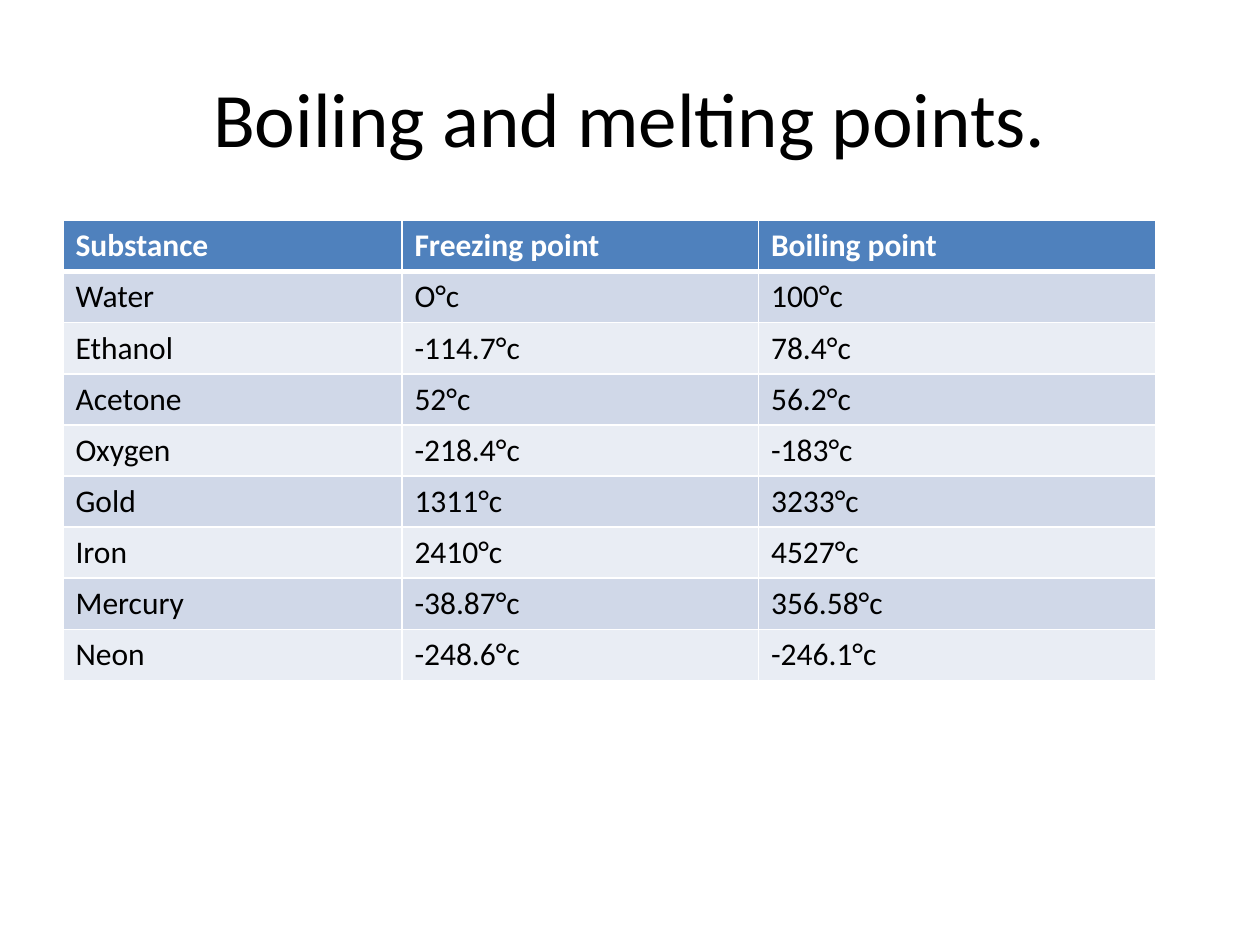
from dataclasses import dataclass

from lxml import etree
from pptx import Presentation
from pptx import util as u
from pptx.dml.color import RGBColor
from pptx.enum import text
from pptx.oxml.ns import qn


@dataclass(frozen=True)
class Theme:
    font: str = "Calibri"
    title_size: int = 44
    table_size: int = 18
    ink: str = "000000"
    paper: str = "FFFFFF"
    header: str = "4F81BD"
    bands: tuple = ("D0D8E8", "E9EDF4")
    thin: int = 1
    thick: int = 3


THEME = Theme()
TITLE = "Boiling and melting points."
COLUMN_WIDTHS = (2.69, 2.83, 3.15)
SUBSTANCES = (
    ("Substance", "Freezing point", "Boiling point"),
    ("Water", "O°c", "100°c"),
    ("Ethanol", "-114.7°c", "78.4°c"),
    ("Acetone", "52°c", "56.2°c"),
    ("Oxygen", "-218.4°c", "-183°c"),
    ("Gold", "1311°c", "3233°c"),
    ("Iron", "2410°c", "4527°c"),
    ("Mercury", "-38.87°c", "356.58°c"),
    ("Neon", "-248.6°c", "-246.1°c"),
)


def write(paragraph, words, size, color, bold=False):
    run = paragraph.add_run()
    run.text = words
    formats = {"name": THEME.font, "size": u.Pt(size), "bold": bold}
    for name, value in formats.items():
        setattr(run.font, name, value)
    run.font.color.rgb = RGBColor.from_string(color)


def set_borders(cell, widths):
    """Draw the cell's edges; widths maps L, R, T and B, in that order, to points."""
    properties = cell._tc.get_or_add_tcPr()
    for side, width in widths.items():
        line = etree.SubElement(properties, qn(f"a:ln{side}"), w=str(u.Pt(width)))
        fill = etree.SubElement(line, qn("a:solidFill"))
        etree.SubElement(fill, qn("a:srgbClr"), val=THEME.paper)


def add_title(slide, left, top, width, height):
    frame = slide.shapes.add_textbox(left, top, width, height).text_frame
    formats = {"word_wrap": True, "vertical_anchor": text.MSO_ANCHOR.MIDDLE}
    for name, value in formats.items():
        setattr(frame, name, value)
    paragraph = frame.paragraphs[0]
    paragraph.alignment = text.PP_ALIGN.CENTER
    write(paragraph, TITLE, THEME.title_size, THEME.ink)


def add_substance_table(slide, left, top, width, height):
    table = slide.shapes.add_table(
        len(SUBSTANCES), len(COLUMN_WIDTHS), left, top, width, height
    ).table
    for column, share in zip(table.columns, COLUMN_WIDTHS):
        column.width = int(width * share / sum(COLUMN_WIDTHS))

    for row, values in enumerate(SUBSTANCES):
        is_header = row == 0
        background = THEME.header if is_header else THEME.bands[(row - 1) % 2]
        color = THEME.paper if is_header else THEME.ink
        # The rule between header and body is thick on both sides
        borders = {
            "L": THEME.thin,
            "R": THEME.thin,
            "T": THEME.thick if row == 1 else THEME.thin,
            "B": THEME.thick if is_header else THEME.thin,
        }
        for column, value in enumerate(values):
            cell = table.cell(row, column)
            set_borders(cell, borders)
            cell.fill.solid()
            cell.fill.fore_color.rgb = RGBColor.from_string(background)
            write(cell.text_frame.paragraphs[0], value, THEME.table_size, color, is_header)


def main():
    presentation = Presentation()
    presentation.slide_width = u.Inches(10)
    presentation.slide_height = u.Inches(7.5)
    slide = presentation.slides.add_slide(presentation.slide_layouts[6])

    # Title across the top, table below it
    add_title(slide, u.Inches(0.5), u.Inches(0.3), u.Inches(9), u.Inches(1.25))
    add_substance_table(
        slide, u.Inches(0.5), u.Inches(1.75), u.Inches(sum(COLUMN_WIDTHS)), u.Inches(3.65)
    )
    presentation.save("out.pptx")


if __name__ == "__main__":
    main()
